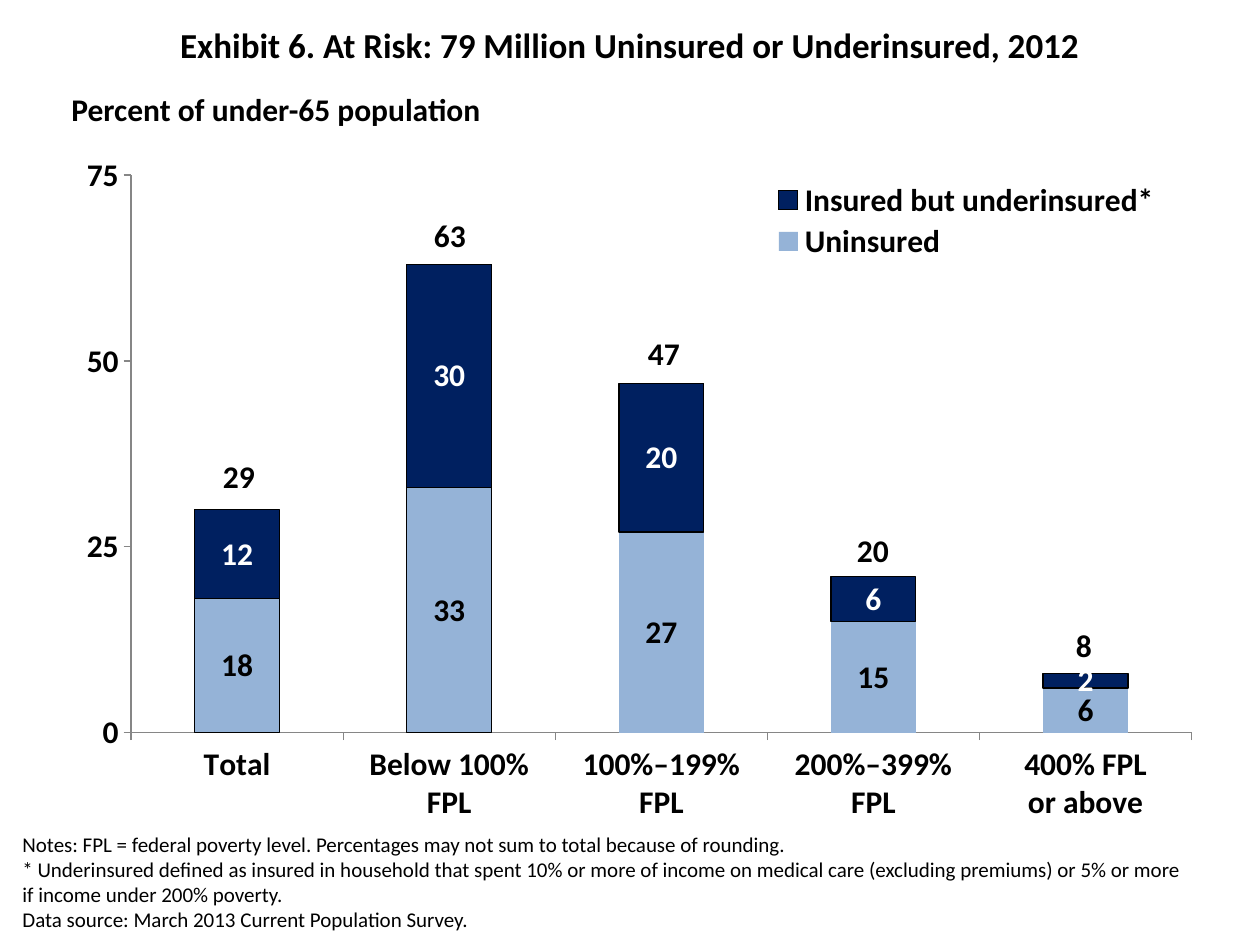
import pptx
import pptx.chart.data
import pptx.dml.color
import pptx.enum.chart
import pptx.enum.text
import pptx.oxml
import pptx.oxml.ns
import pptx.util

PX = 914400 // 126
FONT = "Calibri"


def paint(text):
    return pptx.dml.color.RGBColor.from_string(text)


def style(font, size, bold=True, tint="000000"):
    font.name = FONT
    font.size = pptx.util.Pt(size)
    font.bold = bold
    font.color.rgb = paint(tint)


deck = pptx.Presentation()
deck.slide_width, deck.slide_height = 1260 * PX, 945 * PX
slide = deck.slides.add_slide(deck.slide_layouts[5])

data = pptx.chart.data.CategoryChartData(number_format="#,##0")
data.categories = ["Total", "Below 100%\nFPL", "100%–199%\nFPL", "200%–399%\nFPL", "400% FPL\nor above"]
data.add_series("Uninsured", [18, 33, 27, 15, 6])
data.add_series("Insured but underinsured*", [12, 30, 20, 6, 2])
kinds = pptx.enum.chart
frame = slide.shapes.add_chart(kinds.XL_CHART_TYPE.COLUMN_STACKED, 21 * PX, 116 * PX, 1197 * PX, 777 * PX, data)
chart = frame.chart
chart.has_title = False
style(chart.font, 18)

plot = chart.plots[0]
plot.gap_width = 150
plot.overlap = 100
plot.vary_by_categories = False
for bars, fill, ink in zip(plot.series, ["95B3D7", "002060"], ["000000", "FFFFFF"]):
    bars.format.fill.solid()
    bars.format.fill.fore_color.rgb = paint(fill)
    tags = bars.data_labels
    tags.show_value = True
    tags.number_format = "#,##0"
    tags.number_format_is_linked = False
    tags.position = kinds.XL_LABEL_POSITION.CENTER
    style(tags.font, 18, True, ink)

lower, upper = plot.series
for index in range(2):
    point = lower.points[index].format
    point.fill.solid()
    point.fill.fore_color.rgb = paint("95B3D7")
    point.line.color.rgb = paint("000000")
    point.line.width = pptx.util.Pt(0.75)
upper.format.line.color.rgb = paint("000000")
upper.format.line.width = pptx.util.Pt(0.75)

for axis in [chart.category_axis, chart.value_axis]:
    axis.has_major_gridlines = False
    axis.major_tick_mark = kinds.XL_TICK_MARK.OUTSIDE
    axis.minor_tick_mark = kinds.XL_TICK_MARK.NONE
    axis.format.line.color.rgb = paint("868686")
    axis.format.line.width = pptx.util.Pt(0.75)
    style(axis.tick_labels.font, 18)
scale = chart.value_axis
scale.minimum_scale, scale.maximum_scale, scale.major_unit = 0, 75, 25

chart.has_legend = True
chart.legend.position = kinds.XL_LEGEND_POSITION.RIGHT
chart.legend.include_in_layout = False
style(chart.legend.font, 18)

for old in chart.element.xpath(".//c:plotArea/c:layout | .//c:legend/c:layout"):
    old.getparent().remove(old)
spots = [
    (".//c:plotArea/c:barChart", '<c:layoutTarget val="inner"/>', [0.092, 0.076, 0.886, 0.718]),
    (".//c:legend/c:overlay", "", [0.62, 0.08, 0.34, 0.11]),
]
for mark, target, box in spots:
    parts = target + '<c:xMode val="edge"/><c:yMode val="edge"/>'
    for name, size in zip("xywh", box):
        parts += f'<c:{name} val="{size}"/>'
    space = pptx.oxml.ns.nsdecls("c")
    node = pptx.oxml.parse_xml(f"<c:layout {space}><c:manualLayout>{parts}</c:manualLayout></c:layout>")
    chart.element.xpath(mark)[0].addprevious(node)

title = slide.shapes.title
title.left, title.top, title.width, title.height = 0, 13 * PX, 1260 * PX, 63 * PX
title.text_frame.vertical_anchor = pptx.enum.text.MSO_ANCHOR.MIDDLE
head = title.text_frame.paragraphs[0]
head.alignment = pptx.enum.text.PP_ALIGN.CENTER
run = head.add_run()
run.text = "Exhibit 6. At Risk: 79 Million Uninsured or Underinsured, 2012"
style(run.font, 20)

notes = [
    ["Notes: FPL = federal poverty level. Percentages may not sum to total because of rounding."],
    ["* Underinsured defined as insured in household that spent 10% or more of income on medical care "
     "(excluding premiums) or 5% or more if income under 200% poverty.",
     "Data source: March 2013 Current Population Survey."],
]
left, center = pptx.enum.text.PP_ALIGN.LEFT, pptx.enum.text.PP_ALIGN.CENTER
boxes = [
    (10, 825, 1197, 115, notes, 12, False, left),
    (59, 84, 445, 50, [["Percent of under-65 population"]], 18, True, left),
]
sums = [("29", 195, 451), ("63", 406, 210), ("47", 620, 328), ("20", 829, 525), ("8", 1040, 620)]
for total, x, y in sums:
    boxes.append((x, y, 88, 50, [[total]], 18, True, center))

for x, y, width, height, paras, size, bold, align in boxes:
    body = slide.shapes.add_textbox(x * PX, y * PX, width * PX, height * PX).text_frame
    body.word_wrap = True
    for index, lines in enumerate(paras):
        para = body.add_paragraph() if index else body.paragraphs[0]
        para.alignment = align
        for row, line in enumerate(lines):
            if row:
                para.add_line_break()
            run = para.add_run()
            run.text = line
            style(run.font, size, bold)

deck.save("out.pptx")
